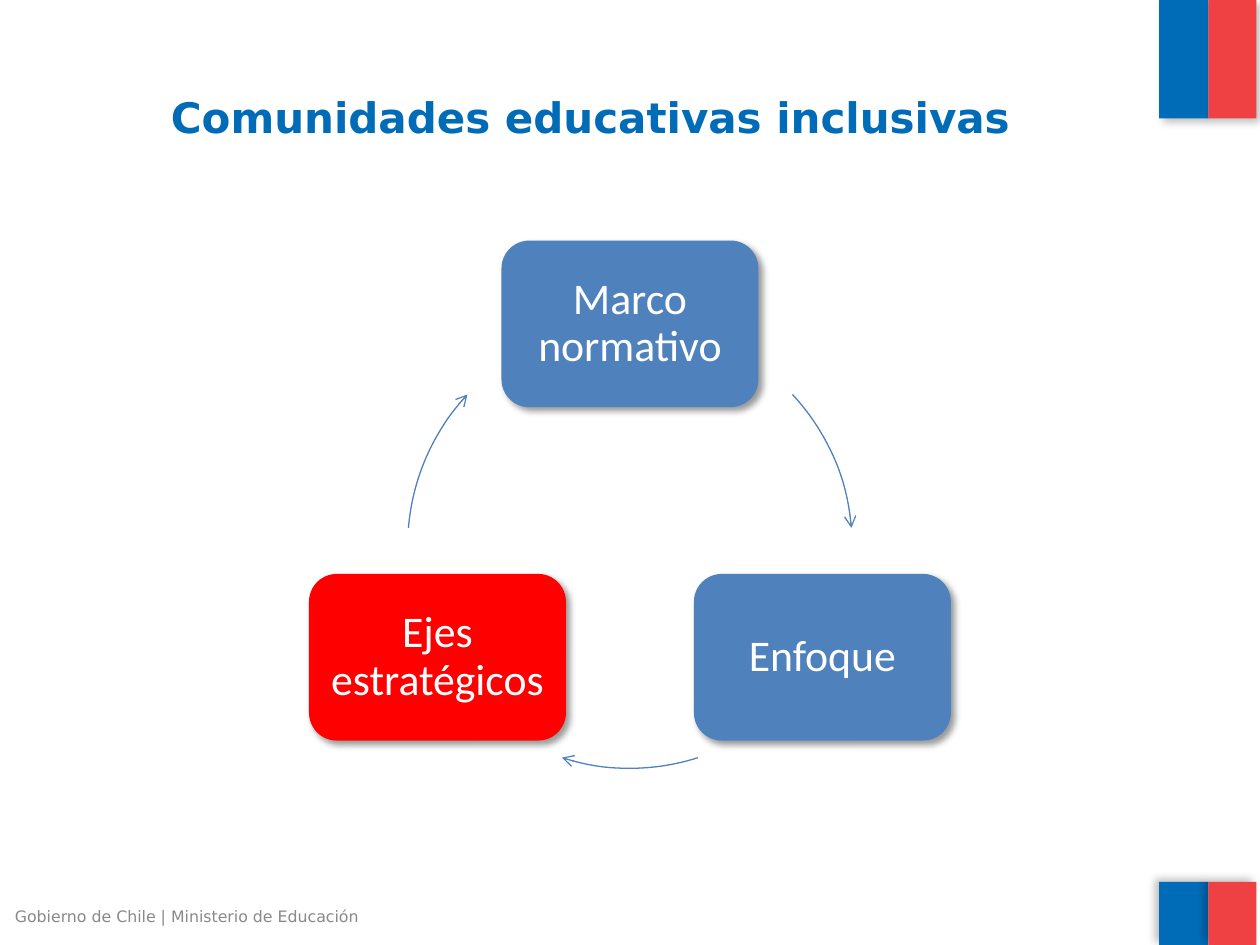
from math import cos, radians, sin

from lxml import etree
from pptx import Presentation
from pptx.dml.color import RGBColor
from pptx.enum.shapes import MSO_SHAPE
from pptx.enum.text import MSO_ANCHOR, PP_ALIGN
from pptx.oxml.ns import qn
from pptx.util import Cm, Pt

RECT, ROUND, ARC = MSO_SHAPE.RECTANGLE, MSO_SHAPE.ROUNDED_RECTANGLE, MSO_SHAPE.ARC
CENTER, MIDDLE = PP_ALIGN.CENTER, MSO_ANCHOR.MIDDLE
NAVY = RGBColor(0x00, 0x6C, 0xB7)
CORAL = RGBColor(0xEF, 0x41, 0x44)
STEEL = RGBColor(0x4F, 0x81, 0xBD)
RED = RGBColor(0xFF, 0x00, 0x00)
WHITE = RGBColor(0xFF, 0xFF, 0xFF)
GREY = RGBColor(0x89, 0x89, 0x89)
SANS, BODY = "DejaVu Sans", "Calibri"


def add_run(para, text, font, size, color, bold=False):
    run = para.add_run()
    run.text = text
    run.font.name = font
    run.font.size = Pt(size)
    run.font.bold = bold
    run.font.color.rgb = color


def add_shadow(shape, alpha, blur, dist, angle):
    shape.shadow.inherit = False
    effects = shape._element.spPr.find(qn("a:effectLst"))
    outer = etree.SubElement(effects, qn("a:outerShdw"), blurRad=str(Pt(blur)),
                             dist=str(Pt(dist)), dir=str(angle * 60000),
                             algn="ctr", rotWithShape="0")
    color = etree.SubElement(outer, qn("a:srgbClr"), val="000000")
    etree.SubElement(color, qn("a:alpha"), val=str(alpha * 1000))


def add_block(slide, kind, box, color):
    shape = slide.shapes.add_shape(kind, *map(Cm, box))
    shape.fill.solid()
    shape.fill.fore_color.rgb = color
    shape.line.fill.background()
    return shape


def add_flag(slide, left, top, height, angle):
    blue = 0.99
    for x, width, color in ((left, blue, NAVY), (left + blue, 0.97, CORAL)):
        band = add_block(slide, RECT, (x, top, width, height), color)
        add_shadow(band, 25, 5, 3, angle)


def add_title(slide, left, top, width, height):
    title = slide.shapes.title
    title.left, title.top = Cm(left), Cm(top)
    title.width, title.height = Cm(width), Cm(height)
    frame = title.text_frame
    frame.vertical_anchor = MIDDLE
    para = frame.paragraphs[0]
    para.alignment = CENTER
    add_run(para, "Comunidades educativas inclusivas", SANS, 24, NAVY, True)


def add_footer(slide, left, top, width, height):
    note = slide.shapes.add_textbox(Cm(left), Cm(top), Cm(width), Cm(height))
    frame = note.text_frame
    frame.word_wrap = True
    frame.vertical_anchor = MIDDLE
    add_run(frame.paragraphs[0], "Gobierno de Chile | Ministerio de Educación",
            SANS, 9, GREY)


def add_node(slide, box, text, color):
    node = add_block(slide, ROUND, box, color)
    add_shadow(node, 40, 4, 3, 45)
    frame = node.text_frame
    frame.word_wrap = True
    frame.vertical_anchor = MIDDLE
    frame.margin_left = frame.margin_right = Cm(0.25)
    frame.margin_top = frame.margin_bottom = Cm(0.25)
    para = frame.paragraphs[0]
    para.alignment = CENTER
    para.line_spacing = 0.9
    add_run(para, text, BODY, 25, WHITE)


def add_arrow(slide, box, start, end):
    """Draw a clockwise arc between two angles in degrees."""
    arc = slide.shapes.add_shape(ARC, *map(Cm, box))
    for i, angle in enumerate((start, end)):
        arc.adjustments[i] = angle % 360 * 0.6  # 60000ths over 100000
    arc.fill.background()
    arc.line.color.rgb = STEEL
    arc.line.width = Pt(0.75)
    arc.shadow.inherit = False
    etree.SubElement(arc.line._get_or_add_ln(), qn("a:tailEnd"), type="arrow")


def add_cycle(slide, left, top, size):
    """Place three nodes on a circle, each followed by an arrow."""
    width, height = 5.18, 3.36
    radius = size / 2
    steps = (("Marco normativo", STEEL, -43, -4.7),
             ("Enfoque", STEEL, 72.2, 107.8),
             ("Ejes estratégicos", RED, 184.7, 223))
    for i, (text, color, start, end) in enumerate(steps):
        angle = radians(120 * i - 90)
        x = left + radius + radius * cos(angle) - width / 2
        y = top + radius + radius * sin(angle) - height / 2
        add_node(slide, (x, y, width, height), text, color)
        add_arrow(slide, (left, top, size, size), start, end)


def main():
    deck = Presentation()
    deck.slide_width, deck.slide_height = Cm(25.4), Cm(19.05)
    slide = deck.slides.add_slide(deck.slide_layouts[5])
    add_footer(slide, 0.05, 18.13, 8.05, 0.69)
    add_flag(slide, 23.37, 0, 2.39, 45)
    add_flag(slide, 23.37, 17.78, 1.27, 215)
    add_title(slide, 0.79, 0.76, 22.23, 3.18)
    add_cycle(slide, 8.22, 6.53, 8.96)
    deck.save("out.pptx")


if __name__ == "__main__":
    main()
